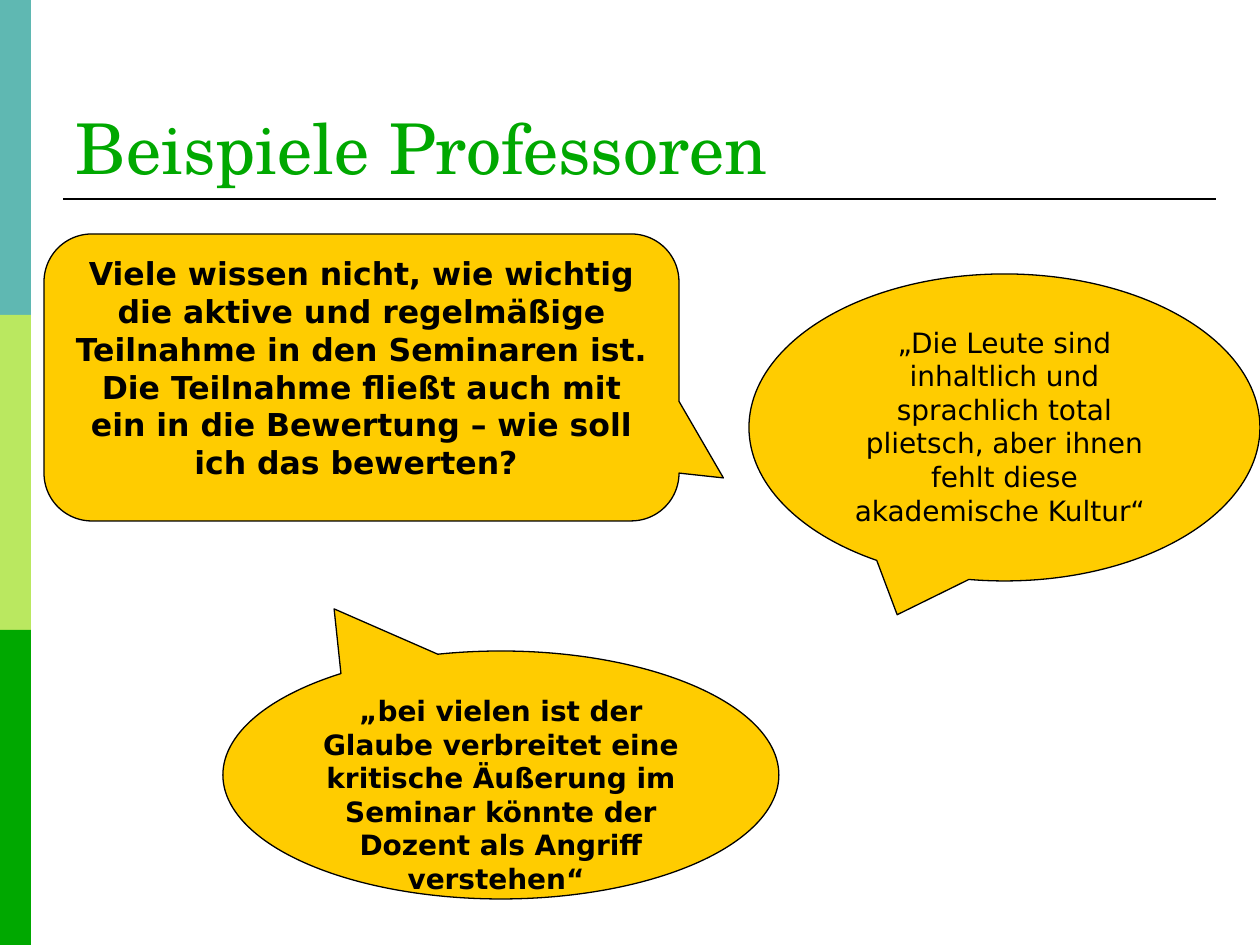
from dataclasses import dataclass

from lxml import etree
from pptx import Presentation
from pptx.dml.color import RGBColor
from pptx.enum.shapes import MSO_CONNECTOR, MSO_SHAPE
from pptx.enum.text import MSO_ANCHOR, MSO_AUTO_SIZE, PP_ALIGN
from pptx.oxml.ns import qn
from pptx.util import Pt

RECT = MSO_SHAPE.RECTANGLE
ROUND_CALLOUT = MSO_SHAPE.ROUNDED_RECTANGULAR_CALLOUT
OVAL_CALLOUT = MSO_SHAPE.OVAL_CALLOUT
STRAIGHT = MSO_CONNECTOR.STRAIGHT
TOP, BOTTOM = MSO_ANCHOR.TOP, MSO_ANCHOR.BOTTOM
LEFT, CENTER = PP_ALIGN.LEFT, PP_ALIGN.CENTER
TITLE_ONLY = 5
PX_PER_INCH = 126
WIDTH, HEIGHT = 1260, 945


@dataclass(frozen=True)
class Theme:
    bands: tuple = ("5FB8B2", "BAE860", "00A800")
    title: str = "00A800"
    bubble: str = "FFCC00"
    ink: str = "000000"
    title_font: str = "TeX Gyre Schola"
    body_font: str = "DejaVu Sans"
    title_size: int = 40
    large_size: int = 18
    body_size: int = 16
    rule_width: float = 1.5
    outline_width: float = 0.75


def px(n):
    return round(n * 914400 / PX_PER_INCH)


def rgb(value):
    return RGBColor.from_string(value)


def write(tf, text, *, font, size, color, bold=False, align=LEFT, anchor=TOP, spacing=1.0):
    tf.word_wrap = True
    tf.auto_size = MSO_AUTO_SIZE.NONE
    tf.vertical_anchor = anchor
    p = tf.paragraphs[0]
    p.alignment = align
    p.line_spacing = spacing
    p.space_before = Pt(0)
    r = p.add_run()
    r.text = text
    r.font.name = font
    r.font.size = Pt(size)
    r.font.bold = bold
    r.font.color.rgb = rgb(color)


class Builder:
    def __init__(self, slide, theme):
        self.s = slide
        self.theme = theme

    def shape(self, kind, box, fill):
        sp = self.s.shapes.add_shape(kind, *map(px, box))
        sp.shadow.inherit = False
        sp.fill.solid()
        sp.fill.fore_color.rgb = rgb(fill)
        sp.line.fill.background()
        return sp

    def bands(self, width):
        height = HEIGHT // len(self.theme.bands)
        for i, color in enumerate(self.theme.bands):
            self.shape(RECT, (0, i * height, width, height), color)

    def rule(self, x1, x2, y):
        line = self.s.shapes.add_connector(STRAIGHT, px(x1), px(y), px(x2), px(y))
        line.line.color.rgb = rgb(self.theme.ink)
        line.line.width = Pt(self.theme.rule_width)
        etree.SubElement(line._element.spPr, qn("a:effectLst"))

    def title(self, text, box):
        sp = self.s.shapes.title
        sp.left, sp.top, sp.width, sp.height = map(px, box)
        write(sp.text_frame, text, font=self.theme.title_font, size=self.theme.title_size,
              color=self.theme.title, anchor=BOTTOM, spacing=0.7)

    def callout(self, kind, box, tail, text, size, bold=False):
        sp = self.shape(kind, box, self.theme.bubble)
        sp.line.color.rgb = rgb(self.theme.ink)
        sp.line.width = Pt(self.theme.outline_width)
        for i, value in enumerate(tail):
            sp.adjustments[i] = value
        write(sp.text_frame, text, font=self.theme.body_font, size=size,
              color=self.theme.ink, bold=bold, align=CENTER)


def main():
    prs = Presentation()
    prs.slide_width, prs.slide_height = px(WIDTH), px(HEIGHT)
    theme = Theme()
    b = Builder(prs.slides.add_slide(prs.slide_layouts[TITLE_ONLY]), theme)

    b.bands(31)
    b.rule(63, 1216, 199)
    b.title("Beispiele Professoren", (63, 35, 1153, 158))
    b.callout(ROUND_CALLOUT, (44, 234, 635, 287), (0.57, 0.35),
              "Viele wissen nicht, wie wichtig die aktive und regelmäßige Teilnahme in den "
              "Seminaren ist. Die Teilnahme fließt auch mit ein in die Bewertung – wie soll "
              "ich das bewerten? ", theme.large_size, bold=True)
    b.callout(OVAL_CALLOUT, (749, 274, 511, 307), (-0.21, 0.61),
              "„Die Leute sind inhaltlich und sprachlich total plietsch, aber ihnen fehlt "
              "diese akademische Kultur“ ", theme.body_size)
    b.callout(OVAL_CALLOUT, (223, 651, 556, 248), (-0.3, -0.67),
              "„bei vielen ist der Glaube verbreitet eine kritische Äußerung im Seminar "
              "könnte der Dozent als Angriff verstehen“ ", theme.body_size, bold=True)

    prs.save("out.pptx")


if __name__ == "__main__":
    main()
